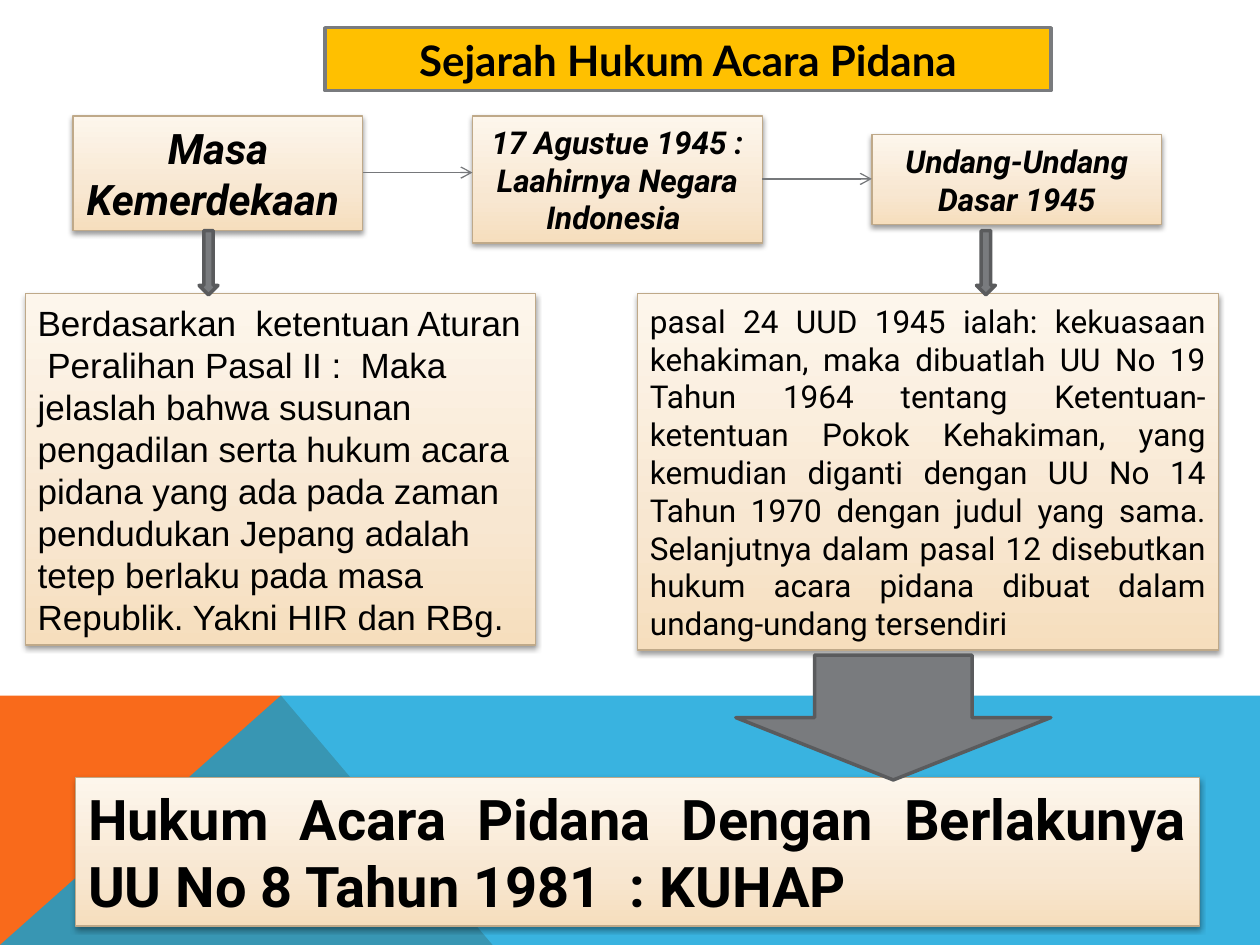
import copy

import lxml.etree
import pptx
import pptx.dml.color
import pptx.enum.shapes
import pptx.enum.text
import pptx.oxml.ns
import pptx.util

Inches = pptx.util.Inches
Pt = pptx.util.Pt
qn = pptx.oxml.ns.qn
SHAPE = pptx.enum.shapes.MSO_SHAPE
ALIGN = pptx.enum.text.PP_ALIGN
ANCHOR = pptx.enum.text.MSO_ANCHOR

COLORS = {
    "text": "000000",
    "title": "FFC000",
    "title_line": "797B7E",
    "orange": "F96A1B",
    "blue": "08A1D9",
    "card_line": "BFA989",
    "arrow": "797B7E",
    "arrow_line": "5A5B5D",
    "link": "76787B",
}
CARD_GRADIENT = [(0, "F6DEBD"), (0.35, "F8E7D1"), (1, "FDF6EC")]
LINE_HEIGHT = 1.2


def rgb(name):
    return pptx.dml.color.RGBColor.from_string(COLORS[name])


def inches(box):
    return [Inches(value) for value in box]


def paint(shape, fill, line=None, width=0.75):
    shape.shadow.inherit = False
    shape.fill.solid()
    shape.fill.fore_color.rgb = rgb(fill)
    if line:
        shape.line.color.rgb = rgb(line)
        shape.line.width = Pt(width)
    else:
        shape.line.fill.background()


def write(shape, text, size, font, align, bold=False, italic=False):
    frame = shape.text_frame
    frame.word_wrap = True
    frame.auto_size = pptx.enum.text.MSO_AUTO_SIZE.NONE
    frame.vertical_anchor = ANCHOR.MIDDLE
    paragraph = frame.paragraphs[0]
    paragraph.alignment = align
    paragraph.line_spacing = Pt(size * LINE_HEIGHT)
    run = paragraph.add_run()
    run.text = text
    run.font.size = Pt(size)
    run.font.name = font
    run.font.bold = bold
    run.font.italic = italic
    run.font.color.rgb = rgb("text")


def add_polygon(slide, points, fill):
    corners = [inches(point) for point in points]
    builder = slide.shapes.build_freeform(*corners[0])
    builder.add_line_segments(corners[1:], close=True)
    polygon = builder.convert_to_shape()
    paint(polygon, fill)
    return polygon


def add_footer_band(slide, box):
    left, top, width, height = box
    right, bottom = left + width, top + height
    peak = left + 2.23
    add_polygon(slide, [(left, bottom), (left, top), (peak, top),
                        (left + 3.91, bottom)], "orange")
    overlay = add_polygon(slide, [(left, bottom), (peak, top), (right, top),
                                  (right, bottom)], "blue")
    color = overlay.fill._xPr.find(qn("a:solidFill"))[0]
    lxml.etree.SubElement(color, qn("a:alpha"), val="80000")


def add_title(slide, box):
    title = slide.shapes.title
    title.left, title.top, title.width, title.height = inches(box)
    title.fill.solid()
    title.fill.fore_color.rgb = rgb("title")
    title.line.color.rgb = rgb("title_line")
    title.line.width = Pt(2)
    write(title, "Sejarah Hukum Acara Pidana", 24, "Lato", ALIGN.CENTER, bold=True)


def add_card(slide, box, text, size, font="Roboto", align=ALIGN.CENTER,
             bold=False, italic=False):
    card = slide.shapes.add_shape(SHAPE.RECTANGLE, *inches(box))
    properties = card._element.spPr

    # Three-stop vertical gradient
    card.fill.gradient()
    card.fill.gradient_angle = 90
    stops = properties.find(".//" + qn("a:gsLst"))
    stops.insert(1, copy.deepcopy(stops[0]))
    for stop, (position, color) in zip(card.fill.gradient_stops, CARD_GRADIENT):
        stop.position = position
        stop.color.rgb = pptx.dml.color.RGBColor.from_string(color)
    card.line.color.rgb = rgb("card_line")
    card.line.width = Pt(0.75)

    # Soft shadow below the card
    card.shadow.inherit = False
    shadow = lxml.etree.SubElement(
        properties.find(qn("a:effectLst")), qn("a:outerShdw"),
        blurRad=str(Pt(3.1)), dist=str(Pt(1.6)), dir="5400000", rotWithShape="0")
    black = lxml.etree.SubElement(shadow, qn("a:srgbClr"), val="000000")
    lxml.etree.SubElement(black, qn("a:alpha"), val="38000")

    write(card, text, size, font, align, bold, italic)


def add_down_arrow(slide, box):
    arrow = slide.shapes.add_shape(SHAPE.DOWN_ARROW, *inches(box))
    paint(arrow, "arrow", "arrow_line", 2)


def add_link(slide, left, right, y):
    link = slide.shapes.add_connector(
        pptx.enum.shapes.MSO_CONNECTOR.STRAIGHT, *inches((left, y, right, y)))
    link.line.color.rgb = rgb("link")
    link.line.width = Pt(0.75)
    lxml.etree.SubElement(link.line._get_or_add_ln(), qn("a:tailEnd"), type="arrow")
    lxml.etree.SubElement(link._element.spPr, qn("a:effectLst"))


def add_timeline(slide, left, top):
    width, pitch = 2.3, 3.17
    stages = [
        ("Masa Kemerdekaan ", 24, 0, 0.91),
        ("17 Agustue 1945 : Laahirnya Negara Indonesia ", 18, 0, 1.01),
        ("Undang-Undang Dasar 1945", 18, 0.15, 0.71),
    ]
    for index, (text, size, drop, height) in enumerate(stages):
        add_card(slide, (left + index * pitch, top + drop, width, height),
                 text, size, bold=True, italic=True)
    for index, drop in enumerate((0.45, 0.5)):
        start = left + index * pitch + width
        add_link(slide, start, start + pitch - width, top + drop)


def add_explanations(slide, top):
    add_card(slide, (0.2, top, 4.05, 2.79),
             "Berdasarkan  ketentuan Aturan  Peralihan Pasal II :  Maka jelaslah "
             "bahwa susunan pengadilan serta hukum acara pidana yang ada pada zaman "
             "pendudukan Jepang adalah tetep berlaku pada masa Republik. Yakni HIR "
             "dan RBg.", 20, "Arial", ALIGN.LEFT)
    add_card(slide, (5.06, top, 4.61, 2.83),
             "pasal 24 UUD 1945 ialah: kekuasaan kehakiman, maka dibuatlah UU No 19 "
             "Tahun 1964 tentang Ketentuan-ketentuan Pokok Kehakiman, yang kemudian "
             "diganti dengan UU No 14 Tahun 1970 dengan judul yang sama. Selanjutnya "
             "dalam pasal 12 disebutkan hukum acara pidana dibuat dalam "
             "undang-undang tersendiri", 18, align=ALIGN.JUSTIFY)
    for left in (1.58, 7.75):
        add_down_arrow(slide, (left, top - 0.5, 0.15, 0.51))


def add_conclusion(slide, box):
    add_card(slide, box,
             "Hukum Acara Pidana Dengan Berlakunya UU No 8 Tahun 1981  : KUHAP",
             32, align=ALIGN.JUSTIFY, bold=True)
    left, top = box[:2]
    add_down_arrow(slide, (left + 5.24, top - 0.97, 2.5, 0.99))


def main():
    deck = pptx.Presentation()
    deck.slide_width, deck.slide_height = Inches(10), Inches(7.5)
    slide = deck.slides.add_slide(deck.slide_layouts[5])
    add_footer_band(slide, (0, 5.52, 10, 1.98))
    add_title(slide, (2.58, 0.22, 5.76, 0.5))
    add_timeline(slide, 0.58, 0.92)
    add_explanations(slide, 2.33)
    add_conclusion(slide, (0.6, 6.17, 8.92, 1.18))
    deck.save("out.pptx")


if __name__ == "__main__":
    main()
